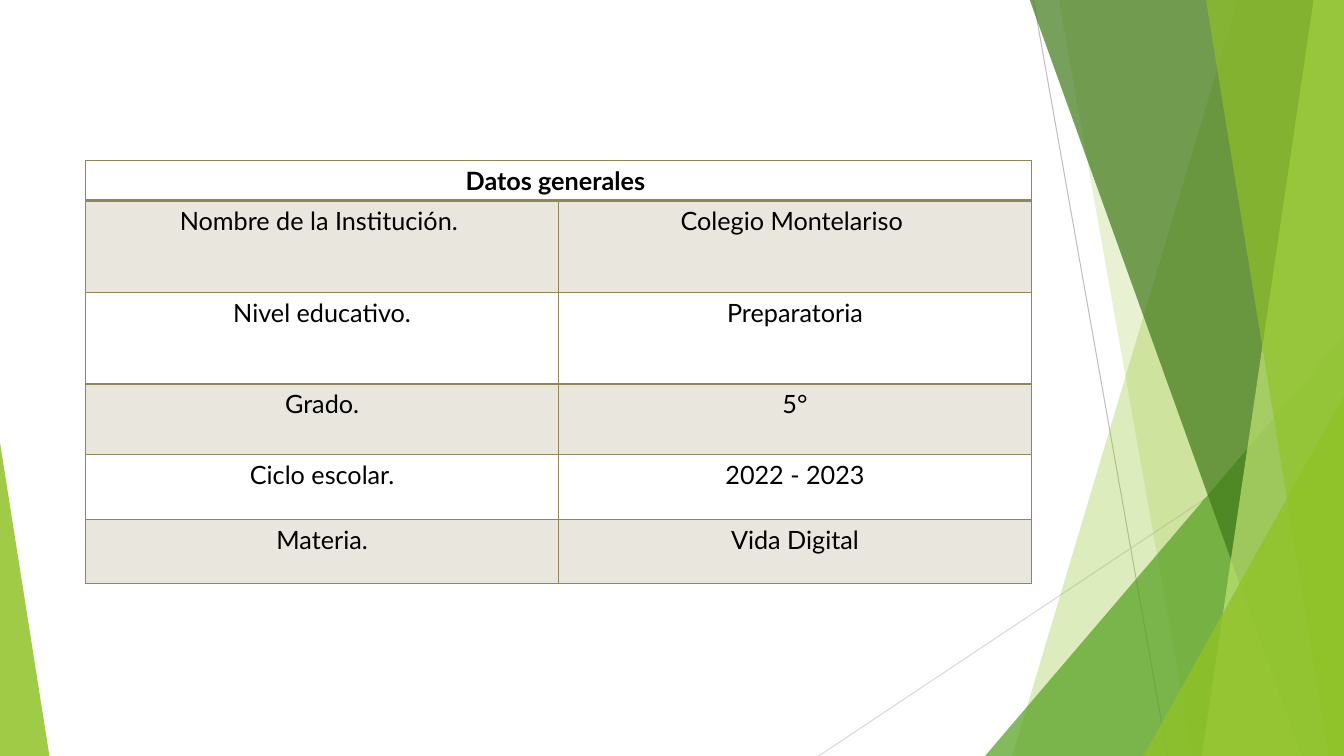
"""Build the school data slide: a two-column table beside translucent green facets."""
import dataclasses
import typing

import pptx
import pptx.dml.color
import pptx.enum.shapes
import pptx.enum.text
import pptx.oxml
import pptx.oxml.ns
import pptx.util

Inches = pptx.util.Inches
Pt = pptx.util.Pt
RGBColor = pptx.dml.color.RGBColor

LIME = RGBColor(0x90, 0xC2, 0x26)
PALE_LIME = RGBColor(0xC0, 0xE4, 0x74)
GREEN = RGBColor(0x54, 0xA0, 0x21)
DARK_GREEN = RGBColor(0x3F, 0x78, 0x19)
GRAY = RGBColor(0xBF, 0xBF, 0xBF)
LIGHT_GRAY = RGBColor(0xD9, 0xD9, 0xD9)
OLIVE = RGBColor(0x91, 0x86, 0x55)
BLACK = RGBColor(0, 0, 0)

WIDTH, HEIGHT, FACET_TOP = 13.33, 7.5, -0.01
ROW_HEIGHTS = (0.39, 0.91, 0.91, 0.7, 0.64, 0.64)
COLUMN_WIDTH = 4.69
HEADING = "Datos generales "
SCHOOL_DATA = (
    ("Nombre de la Institución. ", "Colegio Montelariso "),
    ("Nivel educativo.", "Preparatoria"),
    ("Grado.", "5°"),
    ("Ciclo escolar.", "2022 - 2023"),
    ("Materia.", "Vida Digital"),
)
TEXT_FORMAT = {"name": "Lato", "size": Pt(18)}


@dataclasses.dataclass(frozen=True)
class Ray:
    start: tuple[float, float]
    end: tuple[float, float]
    color: RGBColor


@dataclasses.dataclass(frozen=True)
class Facet:
    top_left: float
    bottom_left: float
    color: RGBColor
    opacity: int


@dataclasses.dataclass(frozen=True)
class Wedge:
    left: float
    top: float
    width: float
    apex: float
    color: RGBColor
    opacity: int


RAYS = (
    Ray((10.25, 0), (11.58, HEIGHT), GRAY),
    Ray((WIDTH, 4.03), (8.12, HEIGHT), LIGHT_GRAY),
)
GREENERY = (
    Facet(12.28, 10.04, LIME, 30),
    Facet(10.5, 11.83, LIME, 20),
    Wedge(9.77, 3.33, 3.56, 1, GREEN, 72),
    Facet(10.21, 12.91, DARK_GREEN, 70),
    Facet(13.03, 11.92, PALE_LIME, 70),
    Facet(11.96, 13.18, LIME, 65),
    Wedge(11.34, 3.93, 1.99, 1, LIME, 80),
    Wedge(0, 4.39, 0.49, 0, LIME, 85),
)


def paint(fill: typing.Any, properties: typing.Any, color: RGBColor, opacity: int) -> None:
    fill.solid()
    fill.fore_color.rgb = color
    tint = properties.find(pptx.oxml.ns.qn("a:solidFill"))[0]
    alpha = tint.makeelement(pptx.oxml.ns.qn("a:alpha"), {"val": str(opacity * 1000)})
    tint.append(alpha)


def draw_ray(shapes: typing.Any, ray: Ray) -> None:
    points = [Inches(value) for value in ray.start + ray.end]
    line = shapes.add_connector(pptx.enum.shapes.MSO_CONNECTOR.STRAIGHT, *points)
    line.line.color.rgb = ray.color
    line.line.width = Pt(0.75)
    properties = line._element.spPr
    properties.append(properties.makeelement(pptx.oxml.ns.qn("a:effectLst"), {}))


def draw_greenery(shapes: typing.Any, part: Facet | Wedge) -> None:
    if isinstance(part, Facet):
        outline = shapes.build_freeform(Inches(part.top_left), Inches(FACET_TOP))
        corners = ((WIDTH, FACET_TOP), (WIDTH, HEIGHT), (part.bottom_left, HEIGHT))
        outline.add_line_segments([(Inches(x), Inches(y)) for x, y in corners])
        leaf = outline.convert_to_shape()
    else:
        leaf = shapes.add_shape(
            pptx.enum.shapes.MSO_SHAPE.ISOSCELES_TRIANGLE,
            Inches(part.left), Inches(part.top),
            Inches(part.width), Inches(HEIGHT - part.top),
        )
        leaf.adjustments[0] = part.apex
    leaf.shadow.inherit = False
    leaf.line.fill.background()
    paint(leaf.fill, leaf._element.spPr, part.color, part.opacity)


def add_borders(properties: typing.Any, bottom: int) -> None:
    for side, width in {"L": 1, "R": 1, "T": 1, "B": bottom}.items():
        properties.append(pptx.oxml.parse_xml(
            f'<a:ln{side} {pptx.oxml.ns.nsdecls("a")} w="{Pt(width)}">'
            f'<a:solidFill><a:srgbClr val="{OLIVE}"/></a:solidFill></a:ln{side}>'
        ))


def fill_cell(cell: typing.Any, text: str, row: int) -> None:
    properties = cell._tc.get_or_add_tcPr()
    add_borders(properties, bottom=1 if row else 2)
    if row % 2:
        paint(cell.fill, properties, OLIVE, 20)
    else:
        cell.fill.background()
    paragraph = cell.text_frame.paragraphs[0]
    paragraph.alignment = pptx.enum.text.PP_ALIGN.CENTER
    if text:
        run = paragraph.add_run()
        run.text = text
        for attribute, value in (TEXT_FORMAT | {"bold": row == 0}).items():
            setattr(run.font, attribute, value)
        run.font.color.rgb = BLACK
    else:
        paragraph.font.size = TEXT_FORMAT["size"]


def draw_school_data(shapes: typing.Any) -> None:
    school_data = shapes.add_table(
        len(ROW_HEIGHTS), 2, Inches(0.85), Inches(1.59),
        Inches(2 * COLUMN_WIDTH), Inches(sum(ROW_HEIGHTS)),
    ).table
    school_data.first_row = False
    school_data.horz_banding = False
    for column in school_data.columns:
        column.width = Inches(COLUMN_WIDTH)
    for row, height in zip(school_data.rows, ROW_HEIGHTS):
        row.height = Inches(height)
    for row, texts in enumerate(((HEADING, ""),) + SCHOOL_DATA):
        for column, text in enumerate(texts):
            fill_cell(school_data.cell(row, column), text, row)
    school_data.cell(0, 0).merge(school_data.cell(0, 1))


def main() -> None:
    deck = pptx.Presentation()
    deck.slide_width, deck.slide_height = Inches(WIDTH), Inches(HEIGHT)
    shapes = deck.slides.add_slide(deck.slide_layouts[6]).shapes
    for ray in RAYS:
        draw_ray(shapes, ray)
    for part in GREENERY:
        draw_greenery(shapes, part)
    draw_school_data(shapes)
    deck.save("out.pptx")


if __name__ == "__main__":
    main()
